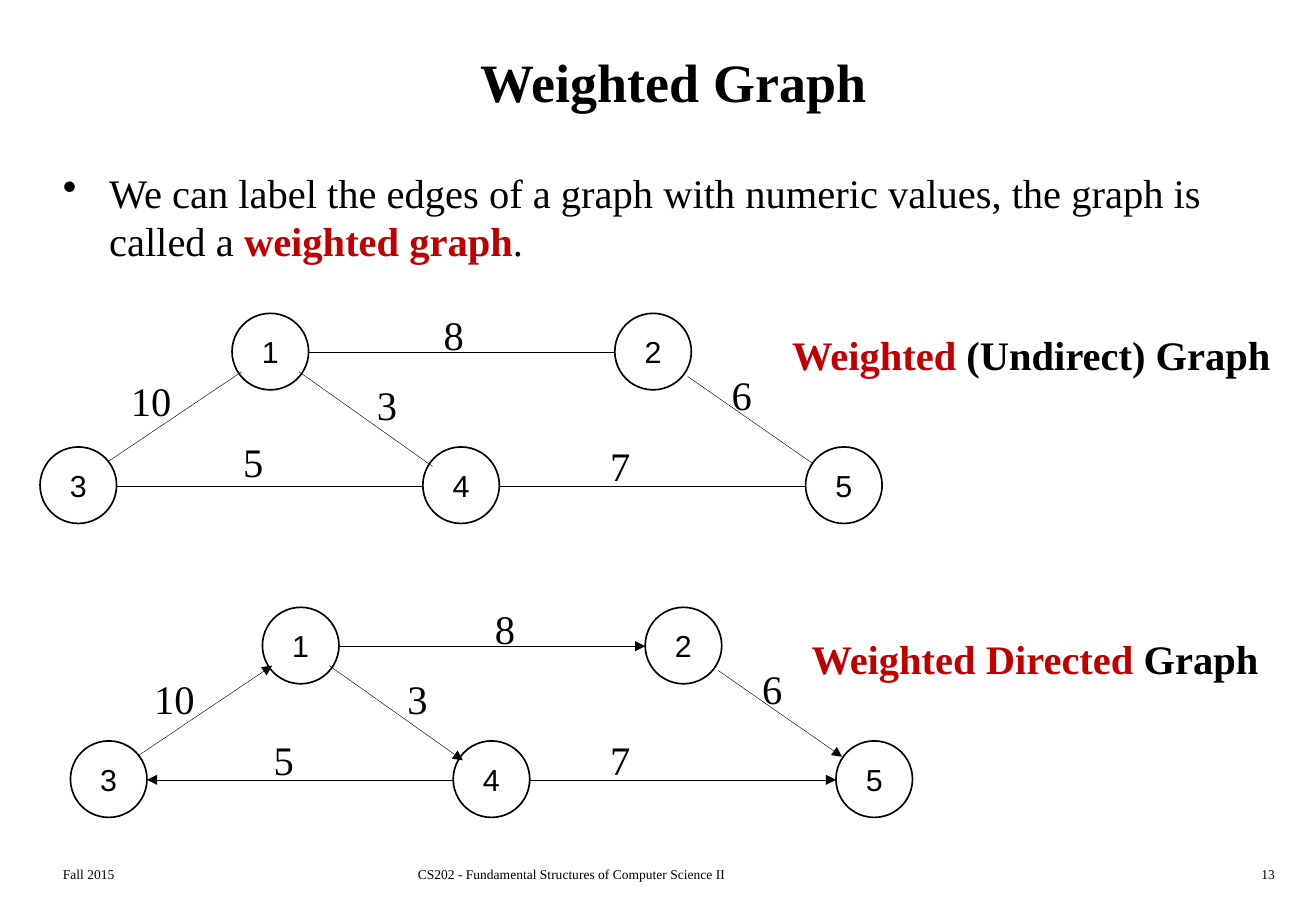
"""Build the slide on weighted graphs, undirected and directed."""
from lxml import etree
from pptx import Presentation
from pptx.dml.color import RGBColor
from pptx.enum.shapes import MSO_CONNECTOR as Conn, MSO_SHAPE as Shape
from pptx.enum.text import MSO_ANCHOR as Anchor, PP_ALIGN as Align
from pptx.oxml.ns import qn
from pptx.util import Inches, Pt

BLACK, RED = "000000", "C00000"
SERIF, SANS = "Times New Roman", "Arial"

TITLE = "Weighted Graph"
BODY = [
    ("We can label the edges of a graph with numeric values, the graph is called a ", BLACK, False),
    ("weighted graph", RED, True),
    (".", BLACK, False),
]
FOOTERS = [
    ("Fall 2015", 0.42, 2.26, Align.LEFT),
    ("CS202 - Fundamental Structures of Computer Science II", 3.34, 4.06, Align.LEFT),
    ("13", 8.33, 2.26, Align.RIGHT),
]

NODE = 0.63
NODES = {"1": (1.58, 0), "2": (4.73, 0), "3": (0, 1.1), "4": (3.15, 1.1), "5": (6.3, 1.1)}
EDGES = [
    ((2.13, 0.48), (3.23, 1.26)),
    ((2.21, 0.32), (4.73, 0.32)),
    ((5.33, 0.52), (6.35, 1.23)),
    ((3.15, 1.42), (0.63, 1.42)),
    ((3.78, 1.42), (6.3, 1.42)),
    ((0.56, 1.22), (1.66, 0.48)),
]
GRAPHS = [
    {
        "origin": (0.33, 2.58),
        "directed": False,
        "weights": [("8", 3.55, 2.5), ("7", 4.92, 3.58), ("10", 0.98, 3.05),
                    ("5", 1.9, 3.55), ("3", 3, 3.08), ("6", 5.92, 3)],
        "caption": [("Weighted", RED, True), (" (Undirect) Graph", BLACK, True)],
        "caption_box": (6.42, 2.67, 4.18, 0.51),
    },
    {
        "origin": (0.58, 5),
        "directed": True,
        "weights": [("8", 3.97, 4.92), ("7", 4.92, 6), ("10", 1.17, 5.5),
                    ("5", 2.15, 6), ("3", 3.25, 5.5), ("6", 6.17, 5.42)],
        "caption": [("Weighted Directed ", RED, True), ("Graph", BLACK, True)],
        "caption_box": (6.58, 5.17, 3.91, 0.51),
    },
]


def rgb(color):
    return RGBColor.from_string(color)


def write(tf, runs, size, font=SERIF, align=Align.LEFT, wrap=False):
    tf.word_wrap = wrap
    p = tf.paragraphs[0]
    p.alignment = align
    for text, color, bold in runs:
        r = p.add_run()
        r.text = text
        r.font.name, r.font.size, r.font.bold = font, Pt(size), bold
        r.font.color.rgb = rgb(color)
    return p


def add_text(s, box, runs, size, align=Align.LEFT, wrap=False):
    tb = s.shapes.add_textbox(*map(Inches, box))
    return write(tb.text_frame, runs, size, align=align, wrap=wrap)


def add_bullet(p):
    p.space_before = Pt(4.8)
    pPr = p._p.get_or_add_pPr()
    pPr.set("marL", str(Inches(0.38)))
    pPr.set("indent", str(-Inches(0.38)))
    etree.SubElement(pPr, qn("a:buChar")).set("char", "•")


def add_edge(s, origin, start, end, directed):
    x, y = origin
    points = (x + start[0], y + start[1], x + end[0], y + end[1])
    edge = s.shapes.add_connector(Conn.STRAIGHT, *map(Inches, points))
    edge.line.color.rgb = rgb(BLACK)
    edge.line.width = Pt(0.25)
    if directed:
        etree.SubElement(edge.line._get_or_add_ln(), qn("a:tailEnd")).set("type", "triangle")
    etree.SubElement(edge._element.spPr, qn("a:effectLst"))


def add_node(s, origin, name, offset):
    box = (origin[0] + offset[0], origin[1] + offset[1], NODE, NODE)
    node = s.shapes.add_shape(Shape.OVAL, *map(Inches, box))
    node.shadow.inherit = False
    node.fill.background()
    node.line.color.rgb = rgb(BLACK)
    node.line.width = Pt(1)
    tf = node.text_frame
    tf.vertical_anchor = Anchor.MIDDLE
    write(tf, [(name, BLACK, False)], 18, SANS, Align.CENTER)


def add_graph(s, graph):
    for start, end in EDGES:
        add_edge(s, graph["origin"], start, end, graph["directed"])
    for name, offset in NODES.items():
        add_node(s, graph["origin"], name, offset)
    for weight, x, y in graph["weights"]:
        width = 0.21 + 0.16 * len(weight)
        add_text(s, (x, y, width, 0.5), [(weight, BLACK, False)], 24, Align.CENTER)
    add_text(s, graph["caption_box"], graph["caption"], 24)


def main():
    prs = Presentation()
    prs.slide_width, prs.slide_height = Inches(10.83), Inches(7.5)
    s = prs.slides.add_slide(prs.slide_layouts[5])

    title = s.shapes.title
    title.left, title.top, title.width, title.height = map(Inches, (0.42, 0.17, 10.25, 1))
    title.text_frame.vertical_anchor = Anchor.MIDDLE
    write(title.text_frame, [(TITLE, BLACK, True)], 32, align=Align.CENTER, wrap=True)

    add_bullet(add_text(s, (0.42, 1.33, 10.17, 1.08), BODY, 24, wrap=True))
    for text, x, width, align in FOOTERS:
        add_text(s, (x, 7.08, width, 0.25), [(text, BLACK, False)], 8, align, wrap=True)
    for graph in GRAPHS:
        add_graph(s, graph)
    prs.save("out.pptx")


if __name__ == "__main__":
    main()
